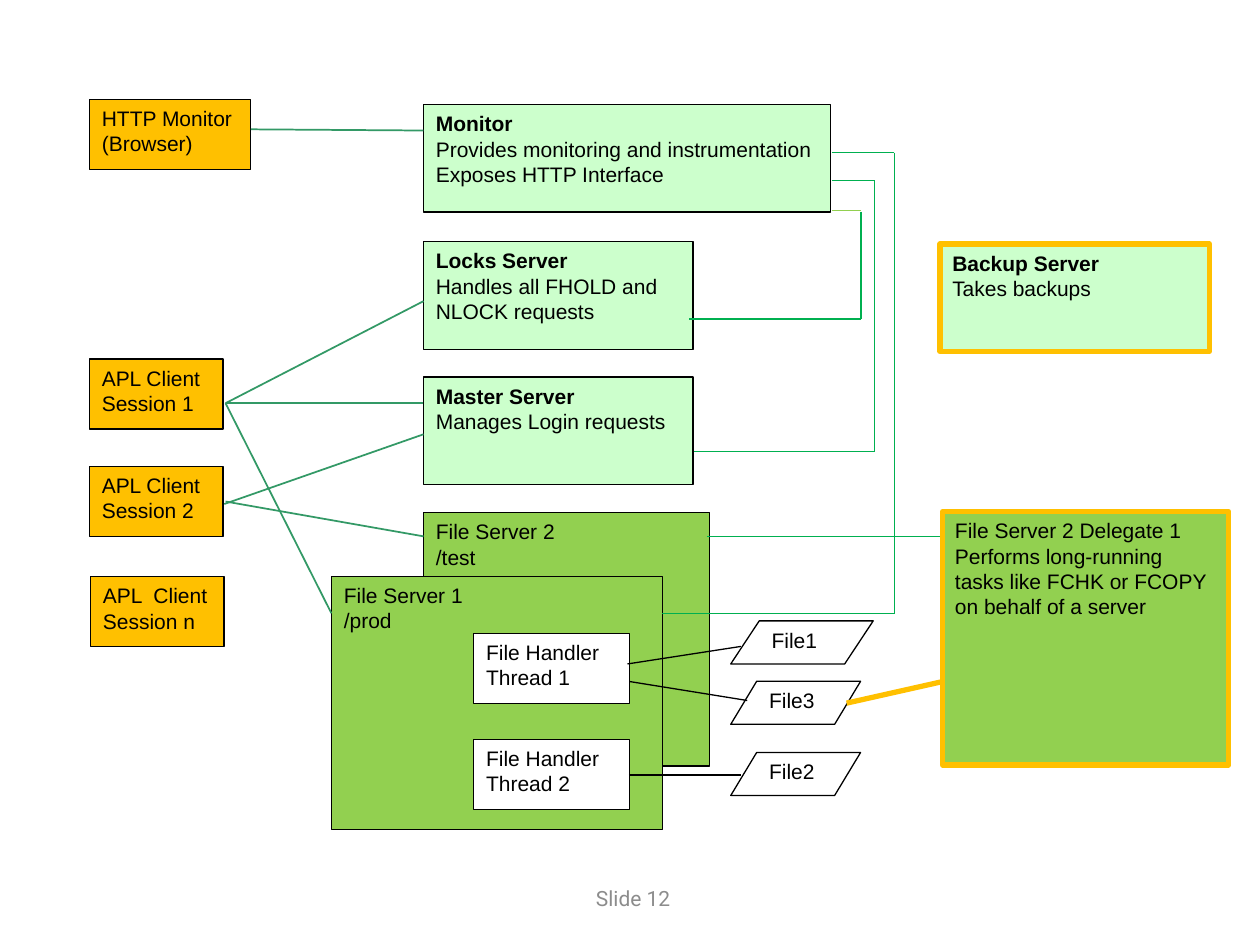
"""Build the file server architecture slide."""
from dataclasses import dataclass

import pptx
import pptx.dml.color
import pptx.enum.shapes
import pptx.enum.text
import pptx.oxml
import pptx.oxml.ns
import pptx.util
from lxml import etree

Pt = pptx.util.Pt
RGBColor = pptx.dml.color.RGBColor
MSO_SHAPE = pptx.enum.shapes.MSO_SHAPE

BLACK = RGBColor(0x00, 0x00, 0x00)
WHITE = RGBColor(0xFF, 0xFF, 0xFF)
GRAY = RGBColor(0x8C, 0x8C, 0x8C)
AMBER = RGBColor(0xFF, 0xC0, 0x00)
MINT = RGBColor(0xCC, 0xFF, 0xCC)
LIME = RGBColor(0x92, 0xD0, 0x50)
SEA_GREEN = RGBColor(0x33, 0x99, 0x66)
GREEN = RGBColor(0x00, 0xB0, 0x50)

LABEL_FONT = {"name": "Arial", "size": Pt(12), "bold": False}
HEADING_FONT = {**LABEL_FONT, "bold": True}
FOOTER_FONT = {**LABEL_FONT, "name": "Roboto"}
TOP_FRAME = {"word_wrap": True, "vertical_anchor": pptx.enum.text.MSO_ANCHOR.TOP}
FOOTER_FRAME = {"word_wrap": True, "vertical_anchor": pptx.enum.text.MSO_ANCHOR.MIDDLE}

CLIENT_X, SERVER_X, THREAD_X, FILE_X = 51.1, 242, 270.7, 417.6
SERVER_H, CLIENT_H, FILE_H = 61.4, 40, 24.6
HUB_X = 475.2
CLIENT_1 = (128.9, 230.4)


@dataclass(frozen=True)
class Node:
    left: float
    top: float
    width: float
    height: float
    fill: RGBColor
    lines: tuple[str, ...]
    heading: bool = False
    geometry: MSO_SHAPE = MSO_SHAPE.RECTANGLE
    outline: RGBColor = BLACK
    weight: float = 0.75


@dataclass(frozen=True)
class Wire:
    points: tuple[tuple[float, float], ...]
    color: RGBColor
    weight: float = 0.75


def client(top: float, name: str, left: float = CLIENT_X, width: float = 76.3) -> Node:
    """Describe a client box."""
    return Node(left, top, width, CLIENT_H, AMBER, (name,))


def server(top: float, width: float, *lines: str) -> Node:
    """Describe a headed server box."""
    return Node(SERVER_X, top, width, SERVER_H, MINT, lines, heading=True)


def thread(top: float, *lines: str) -> Node:
    """Describe a file handler thread."""
    return Node(THREAD_X, top, 88.9, CLIENT_H, WHITE, lines)


def data_file(top: float, width: float, name: str) -> Node:
    """Describe a file as a parallelogram."""
    return Node(FILE_X, top, width, FILE_H, WHITE, (name,),
                geometry=MSO_SHAPE.FLOWCHART_DATA)


def hub_wire(exit_y: float, turn_x: float, end_x: float, end_y: float) -> Wire:
    """Describe a wire from the monitor, down and back to a server."""
    return Wire(((HUB_X, exit_y), (turn_x, exit_y), (turn_x, end_y), (end_x, end_y)), GREEN)


NODES = (
    Node(SERVER_X, 293, 163.6, 144.8, LIME, ("File Server 2\v/test",)),
    Node(189.4, 329.4, 189.1, 144.8, LIME, ("File Server 1\v/prod",)),
    data_file(354.8, 81.4, "File1"),
    data_file(389.3, 74.2, "File3"),
    data_file(430, 74.2, "File2"),
    client(56.9, "HTTP Monitor (Browser)", width=92.2),
    client(205.2, "APL Client Session 1"),
    client(266.5, "APL Client Session 2"),
    client(329.5, "APL  Client Session n", left=51.8),
    thread(361.9, "File Handler Thread 1"),
    thread(422.6, "File Handler", "Thread 2"),
    server(59.8, 232.6, "Monitor", "Provides monitoring and instrumentation",
           "Exposes HTTP Interface"),
    server(138.2, 154.1, "Locks Server", "Handles all FHOLD and NLOCK requests"),
    server(215.5, 154.1, "Master Server", "Manages Login requests"),
    Node(537.1, 139.4, 154.1, SERVER_H, MINT, ("Backup Server", "Takes backups"),
         heading=True, outline=AMBER, weight=3),
    Node(538.6, 292.4, 163.6, 144.8, LIME,
         ("File Server 2 Delegate 1\vPerforms long-running tasks like FCHK or FCOPY "
          "on behalf of a server",), outline=AMBER, weight=3),
)

WIRES = (
    Wire(((143.3, 73.9), (SERVER_X, 74.6)), SEA_GREEN, 1),
    Wire((CLIENT_1, (SERVER_X, 172.1)), SEA_GREEN, 1),
    Wire((CLIENT_1, (SERVER_X, 230.4)), SEA_GREEN, 1),
    Wire((CLIENT_1, (189.4, 350.5)), SEA_GREEN, 1),
    Wire(((128.9, 286.6), (SERVER_X, 306.5)), SEA_GREEN, 1),
    Wire(((128.2, 288), (SERVER_X, 248.2)), SEA_GREEN, 1),
    hub_wire(87.2, 511, 378.2, 350.6),
    hub_wire(103, 499.8, 396.7, 257.9),
    Wire(((HUB_X, 120.3), (492, 120.3)), LIME),
    Wire(((492, 121), (492, 182.3), (393.8, 182.3)), GREEN),
    Wire(((403.9, 306.7), (537.1, 306.7)), GREEN),
    Wire(((358.6, 379.4), (423.4, 369.4)), BLACK),
    Wire(((360, 389.5), (427, 400.3)), BLACK),
    Wire(((359.3, 442.8), (423.4, 442.8)), BLACK),
    Wire(((483.8, 401.8), (538.6, 389.5)), AMBER, 3),
)


def apply_format(target, values: dict) -> None:
    """Set each format value on the target."""
    for name, value in values.items():
        setattr(target, name, value)


def write_line(paragraph, text: str, font: dict, color: RGBColor, align) -> None:
    """Fill a paragraph with formatted text."""
    paragraph.text = text
    paragraph.alignment = align
    for run in paragraph.runs:
        apply_format(run.font, font)
        run.font.color.rgb = color


def draw_node(slide, node: Node) -> None:
    """Draw a labelled box."""
    box = slide.shapes.add_shape(
        node.geometry, Pt(node.left), Pt(node.top), Pt(node.width), Pt(node.height))
    box.shadow.inherit = False
    box.fill.solid()
    box.fill.fore_color.rgb = node.fill
    box.line.color.rgb = node.outline
    box.line.width = Pt(node.weight)
    frame = box.text_frame
    apply_format(frame, TOP_FRAME)
    for index, text in enumerate(node.lines):
        paragraph = frame.add_paragraph() if index else frame.paragraphs[0]
        font = HEADING_FONT if node.heading and index == 0 else LABEL_FONT
        write_line(paragraph, text, font, BLACK, pptx.enum.text.PP_ALIGN.LEFT)


def draw_wire(slide, wire: Wire) -> None:
    """Draw straight segments through the points of a wire."""
    for start, end in zip(wire.points, wire.points[1:]):
        segment = slide.shapes.add_connector(
            pptx.enum.shapes.MSO_CONNECTOR.STRAIGHT, *map(Pt, start + end))
        segment.line.color.rgb = wire.color
        segment.line.width = Pt(wire.weight)
        etree.SubElement(segment._element.spPr, pptx.oxml.ns.qn("a:effectLst"))


def draw_footer(slide) -> None:
    """Draw the slide number."""
    footer = slide.shapes.add_textbox(Pt(280.8), Pt(499), Pt(162), Pt(28.8)).text_frame
    apply_format(footer, FOOTER_FRAME)
    write_line(footer.paragraphs[0], "Slide 12", FOOTER_FONT, GRAY,
               pptx.enum.text.PP_ALIGN.CENTER)


def main() -> None:
    """Build and save the slide."""
    deck = pptx.Presentation()
    apply_format(deck, {"slide_width": Pt(720), "slide_height": Pt(540)})
    slide = deck.slides.add_slide(deck.slide_layouts[6])
    draw_footer(slide)
    for node in NODES:
        draw_node(slide, node)
    for wire in WIRES:
        draw_wire(slide, wire)
    deck.save("out.pptx")


if __name__ == "__main__":
    main()
